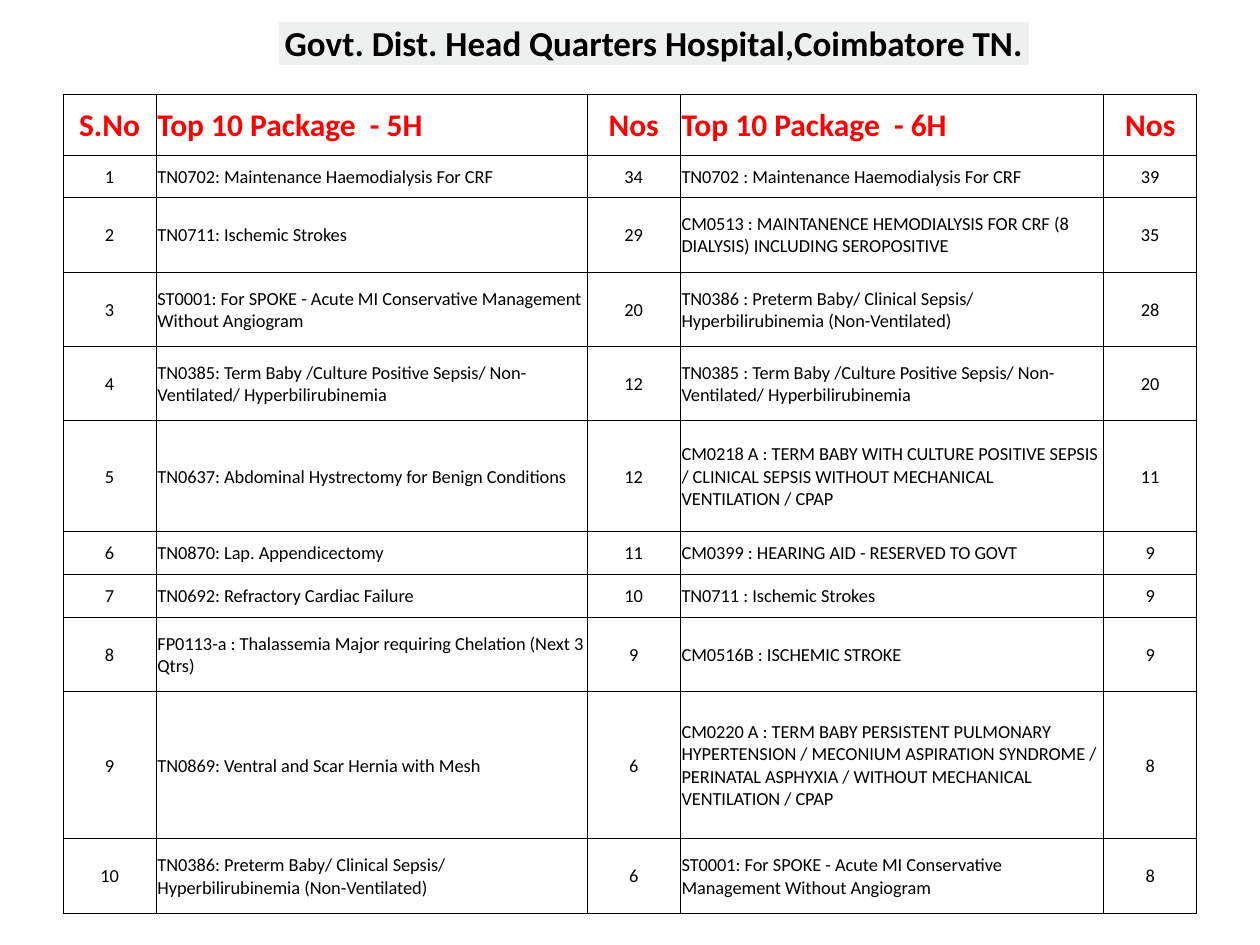
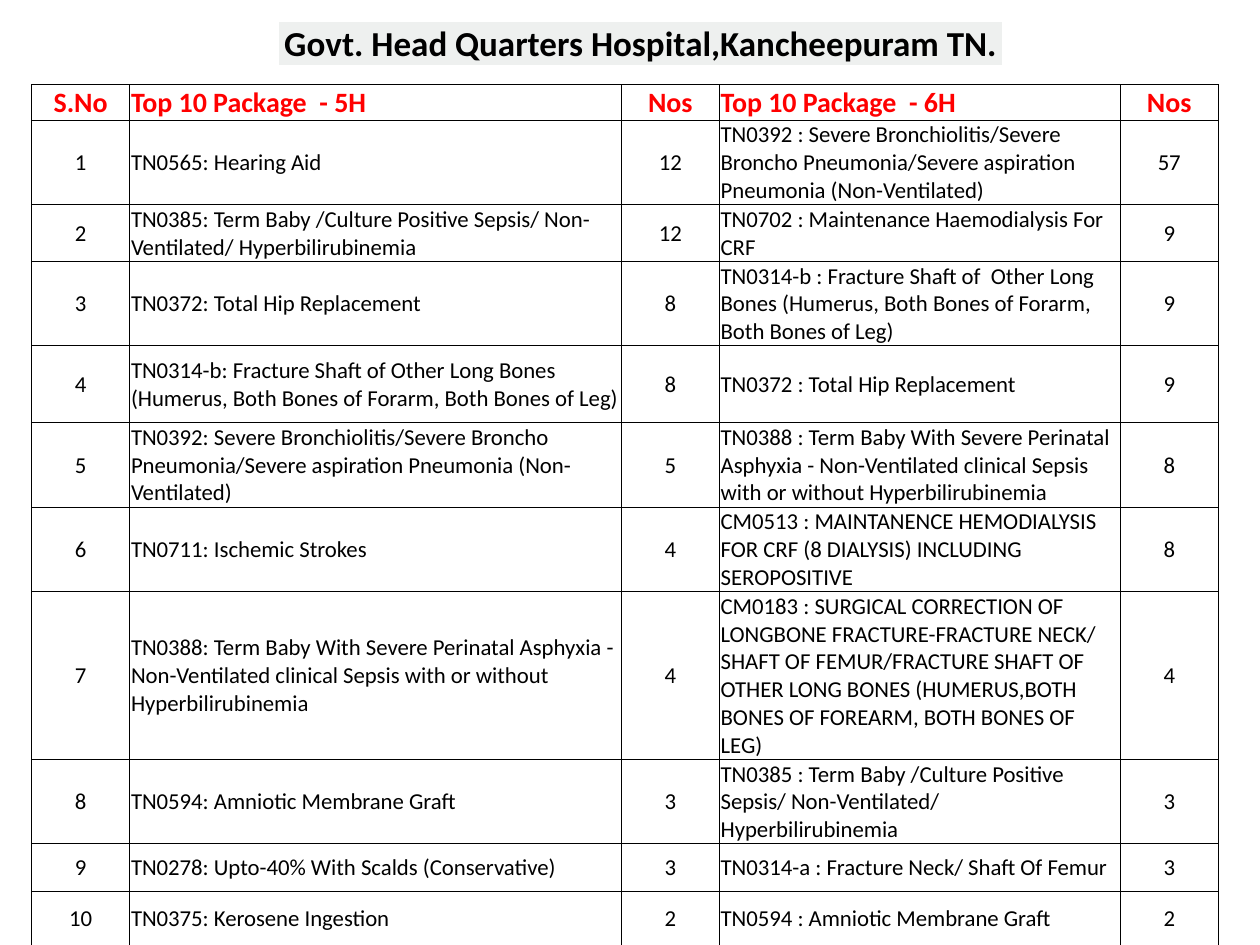
from dataclasses import dataclass

from lxml import etree
from pptx import Presentation
from pptx.dml.color import RGBColor
from pptx.enum import shapes as s
from pptx.enum import text as t
from pptx.oxml import ns
from pptx.slide import Slide
from pptx.table import Table, _Cell as Cell
from pptx.util import Inches, Pt


@dataclass(frozen=True)
class Theme:
    font: str = "Calibri"
    ink: str = "000000"
    red: str = "FF0000"
    white: str = "FFFFFF"
    band: str = "EEF0EF"
    title: float = 20
    rule: float = 0.5
    edge: float = 1


@dataclass(frozen=True)
class Style:
    size: float
    color: str
    bold: bool
    fill: str
    line: str
    width: float
    anchor: t.MSO_ANCHOR = t.MSO_ANCHOR.MIDDLE


@dataclass(frozen=True)
class Entry:
    old: str
    old_nos: int
    new: str
    new_nos: int


@dataclass(frozen=True)
class Page:
    title: str
    width: float
    left: float
    top: float
    cols: tuple[float, ...]
    rows: tuple[float, ...]
    head: float
    body: float
    items: tuple[Entry, ...]


THEME = Theme()
HEADS = ("S.No", "Top 10 Package  - 5H", "Nos", "Top 10 Package  - 6H", "Nos")
NAMES = (1, 3)

PAGES = (
    Page(
        "Govt. Dist. Head Quarters Hospital,Coimbatore TN.",
        5.96, 0.5, 0.75,
        (0.74, 3.42, 0.74, 3.36, 0.74),
        (0.48, 0.34, 0.59, 0.59, 0.59, 0.88, 0.34, 0.34, 0.59, 1.17, 0.59),
        18, 10.5,
        (
            Entry("TN0702: Maintenance Haemodialysis For CRF", 34,
                  "TN0702 : Maintenance Haemodialysis For CRF", 39),
            Entry("TN0711: Ischemic Strokes", 29,
                  "CM0513 : MAINTANENCE HEMODIALYSIS FOR CRF (8 DIALYSIS) "
                  "INCLUDING SEROPOSITIVE", 35),
            Entry("ST0001: For SPOKE - Acute MI Conservative Management "
                  "Without Angiogram", 20,
                  "TN0386 : Preterm Baby/ Clinical Sepsis/ "
                  "Hyperbilirubinemia (Non-Ventilated)", 28),
            Entry("TN0385: Term Baby /Culture Positive Sepsis/ "
                  "Non-Ventilated/ Hyperbilirubinemia", 12,
                  "TN0385 : Term Baby /Culture Positive Sepsis/ "
                  "Non-Ventilated/ Hyperbilirubinemia", 20),
            Entry("TN0637: Abdominal Hystrectomy for Benign Conditions", 12,
                  "CM0218 A : TERM BABY WITH CULTURE POSITIVE SEPSIS / "
                  "CLINICAL SEPSIS WITHOUT MECHANICAL VENTILATION / CPAP", 11),
            Entry("TN0870: Lap. Appendicectomy", 11,
                  "CM0399 : HEARING AID - RESERVED TO GOVT", 9),
            Entry("TN0692: Refractory Cardiac Failure", 10,
                  "TN0711 : Ischemic Strokes", 9),
            Entry("FP0113-a : Thalassemia Major requiring Chelation "
                  "(Next 3 Qtrs)", 9,
                  "CM0516B : ISCHEMIC STROKE", 9),
            Entry("TN0869: Ventral and Scar Hernia with Mesh", 6,
                  "CM0220 A : TERM BABY PERSISTENT PULMONARY HYPERTENSION / "
                  "MECONIUM ASPIRATION SYNDROME / PERINATAL ASPHYXIA / "
                  "WITHOUT MECHANICAL VENTILATION / CPAP", 8),
            Entry("TN0386: Preterm Baby/ Clinical Sepsis/ "
                  "Hyperbilirubinemia (Non-Ventilated)", 6,
                  "ST0001: For SPOKE - Acute MI Conservative Management "
                  "Without Angiogram", 8),
        ),
    ),
    Page(
        "Govt. Head Quarters Hospital,Kancheepuram TN.",
        5.75, 0.25, 0.67,
        (0.78, 3.9, 0.78, 3.18, 0.78),
        (0.26, 0.61, 0.43, 0.61, 0.61, 0.61, 0.61, 1.22, 0.61, 0.38, 0.43),
        16, 13,
        (
            Entry("TN0565: Hearing Aid", 12,
                  "TN0392 : Severe Bronchiolitis/Severe Broncho "
                  "Pneumonia/Severe aspiration Pneumonia (Non-Ventilated)", 57),
            Entry("TN0385: Term Baby /Culture Positive Sepsis/ "
                  "Non-Ventilated/ Hyperbilirubinemia", 12,
                  "TN0702 : Maintenance Haemodialysis For CRF", 9),
            Entry("TN0372: Total Hip Replacement", 8,
                  "TN0314-b : Fracture Shaft of  Other Long Bones "
                  "(Humerus, Both Bones of Forarm, Both Bones of Leg)", 9),
            Entry("TN0314-b: Fracture Shaft of Other Long Bones "
                  "(Humerus, Both Bones of Forarm, Both Bones of Leg)", 8,
                  "TN0372 : Total Hip Replacement", 9),
            Entry("TN0392: Severe Bronchiolitis/Severe Broncho "
                  "Pneumonia/Severe aspiration Pneumonia (Non-Ventilated)", 5,
                  "TN0388 : Term Baby With Severe Perinatal Asphyxia - "
                  "Non-Ventilated clinical Sepsis with or without "
                  "Hyperbilirubinemia", 8),
            Entry("TN0711: Ischemic Strokes", 4,
                  "CM0513 : MAINTANENCE HEMODIALYSIS FOR CRF (8 DIALYSIS) "
                  "INCLUDING SEROPOSITIVE", 8),
            Entry("TN0388: Term Baby With Severe Perinatal Asphyxia - "
                  "Non-Ventilated clinical Sepsis with or without "
                  "Hyperbilirubinemia", 4,
                  "CM0183 : SURGICAL CORRECTION OF LONGBONE "
                  "FRACTURE-FRACTURE NECK/ SHAFT OF FEMUR/FRACTURE SHAFT OF "
                  "OTHER LONG BONES (HUMERUS,BOTH BONES OF FOREARM, "
                  "BOTH BONES OF LEG)", 4),
            Entry("TN0594: Amniotic Membrane Graft", 3,
                  "TN0385 : Term Baby /Culture Positive Sepsis/ "
                  "Non-Ventilated/ Hyperbilirubinemia", 3),
            Entry("TN0278: Upto-40% With Scalds (Conservative)", 3,
                  "TN0314-a : Fracture Neck/ Shaft Of Femur", 3),
            Entry("TN0375: Kerosene Ingestion", 2,
                  "TN0594 : Amniotic Membrane Graft", 2),
        ),
    ),
)


def rgb(code: str) -> RGBColor:
    return RGBColor.from_string(code)


def border(cell: Cell, style: Style) -> None:
    props = cell._tc.get_or_add_tcPr()
    for side in ("lnL", "lnR", "lnT", "lnB"):
        line = etree.SubElement(props, ns.qn(f"a:{side}"), w=str(Pt(style.width)))
        fill = etree.SubElement(line, ns.qn("a:solidFill"))
        etree.SubElement(fill, ns.qn("a:srgbClr"), val=style.line)


def fill_cell(cell: Cell, words: str, style: Style, center: bool) -> None:
    border(cell, style)
    cell.fill.solid()
    cell.fill.fore_color.rgb = rgb(style.fill)
    cell.vertical_anchor = style.anchor
    cell.margin_left = cell.margin_right = cell.margin_top = Inches(0.01)
    cell.margin_bottom = 0
    para = cell.text_frame.paragraphs[0]
    para.alignment = t.PP_ALIGN.CENTER if center else t.PP_ALIGN.LEFT
    run = para.add_run()
    run.text = words
    font = run.font
    font.name = THEME.font
    font.size = Pt(style.size)
    font.bold = style.bold
    font.color.rgb = rgb(style.color)
    font.language_id = None


def new_table(slide: Slide, left: float, top: float,
              cols: tuple[float, ...], rows: tuple[float, ...]) -> Table:
    grid = slide.shapes.add_table(
        len(rows), len(cols), Inches(left), Inches(top),
        Inches(sum(cols)), Inches(sum(rows)),
    ).table
    grid.first_row = grid.horz_banding = False
    for col, width in zip(grid.columns, cols):
        col.width = Inches(width)
    for row, height in zip(grid.rows, rows):
        row.height = Inches(height)
    return grid


def add_panel(slide: Slide) -> None:
    panel = slide.shapes.add_shape(
        s.MSO_SHAPE.ROUNDED_RECTANGLE,
        Inches(0.1), Inches(0.11), Inches(9.8), Inches(7.29),
    )
    panel.adjustments[0] = 0.02
    panel.shadow.inherit = False
    panel.fill.solid()
    panel.fill.fore_color.rgb = rgb(THEME.white)
    panel.line.fill.background()


def add_title(slide: Slide, page: Page) -> None:
    style = Style(THEME.title, THEME.ink, True, THEME.band, THEME.white,
                  THEME.edge, t.MSO_ANCHOR.BOTTOM)
    band = new_table(slide, 2.21, 0.17, (page.width,), (0.19,))
    fill_cell(band.cell(0, 0), page.title, style, True)


def add_grid(slide: Slide, page: Page) -> None:
    lines = [HEADS] + [
        (str(num), item.old, str(item.old_nos), item.new, str(item.new_nos))
        for num, item in enumerate(page.items, 1)
    ]
    frame = (THEME.white, THEME.ink, THEME.rule)
    head = Style(page.head, THEME.red, True, *frame)
    body = Style(page.body, THEME.ink, False, *frame)
    grid = new_table(slide, page.left, page.top, page.cols, page.rows)
    for r, line in enumerate(lines):
        for c, words in enumerate(line):
            fill_cell(grid.cell(r, c), words, body if r else head,
                      c not in NAMES)


def main() -> None:
    deck = Presentation()
    deck.slide_width, deck.slide_height = Inches(10), Inches(7.5)
    for page in PAGES:
        slide = deck.slides.add_slide(deck.slide_layouts[6])
        add_panel(slide)
        add_title(slide, page)
        add_grid(slide, page)
    deck.save("out.pptx")


if __name__ == "__main__":
    main()
